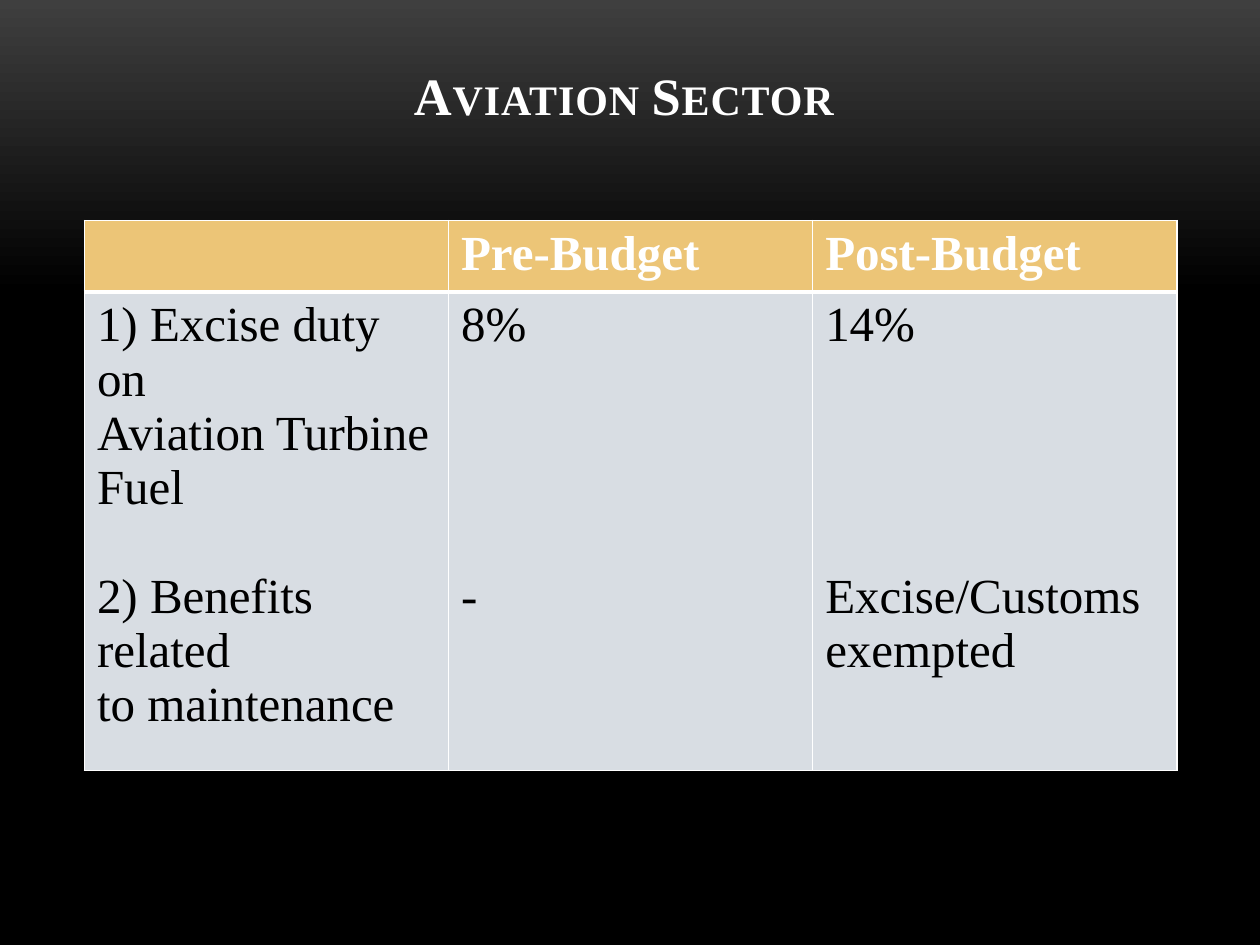
from dataclasses import dataclass

from lxml.etree import SubElement
from pptx import Presentation
from pptx.dml.color import RGBColor
from pptx.enum.text import MSO_ANCHOR, PP_ALIGN
from pptx.oxml.ns import qn
from pptx.util import Inches, Pt


@dataclass(frozen=True)
class Theme:
    font: str = "Times New Roman"
    title_size: int = 30
    table_size: int = 28
    line_height: int = 31
    white: str = "FFFFFF"
    black: str = "000000"
    glow: str = "3F3F3F"
    header: str = "ECC577"
    body: str = "D8DDE3"


THEME = Theme()
LEFT, WIDTH = 0.67, 8.67
ROW_HEIGHTS = (0.53, 3.54)

# Each cell holds (text, number of lines left free above it)
ROWS = [
    [[], [("Pre-Budget", 0)], [("Post-Budget", 0)]],
    [
        [("1) Excise duty on", 0), ("Aviation Turbine Fuel", 0),
         ("2) Benefits related", 1), ("to maintenance", 0)],
        [("8%", 0), ("-", 4)],
        [("14%", 0), ("Excise/Customs exempted", 4)],
    ],
]


def write(paragraph, text, *, size, color, bold=False, align=PP_ALIGN.LEFT,
          space_before=0, small_caps=False, spacing=0):
    paragraph.alignment = align
    if space_before:
        paragraph.space_before = Pt(space_before)
    run = paragraph.add_run()
    run.text = text
    font = run.font
    font.name, font.size, font.bold = THEME.font, Pt(size), bold
    font.color.rgb = RGBColor.from_string(color)
    properties = run._r.get_or_add_rPr()
    if small_caps:
        properties.set("cap", "small")
    if spacing:
        properties.set("spc", str(int(spacing * 100)))


def paint_background(slide):
    fill = slide.background.fill
    fill.gradient()
    fill.gradient_angle = 270
    stops = ((0, THEME.glow), (0.31, THEME.black))
    for stop, (position, color) in zip(fill.gradient_stops, stops):
        stop.position = position
        stop.color.rgb = RGBColor.from_string(color)


def add_title(slide, text):
    shape = slide.shapes.add_textbox(
        Inches(LEFT), Inches(0.3), Inches(WIDTH), Inches(1.25))
    frame = shape.text_frame
    frame.word_wrap = True
    frame.vertical_anchor = MSO_ANCHOR.BOTTOM
    frame.margin_bottom = Inches(0.55)
    write(frame.paragraphs[0], text, size=THEME.title_size, color=THEME.white,
          bold=True, align=PP_ALIGN.CENTER, small_caps=True, spacing=0.5)


def set_borders(cell, **widths):
    properties = cell._tc.get_or_add_tcPr()
    for side in "LRTB":
        line = SubElement(properties, qn(f"a:ln{side}"),
                          w=str(Pt(widths.get(side, 1))))
        fill = SubElement(line, qn("a:solidFill"))
        SubElement(fill, qn("a:srgbClr"), val=THEME.white)


def fill_cell(cell, lines, is_header):
    set_borders(cell, **({"B": 3} if is_header else {"T": 3}))
    cell.fill.solid()
    cell.fill.fore_color.rgb = RGBColor.from_string(
        THEME.header if is_header else THEME.body)
    frame = cell.text_frame
    for index, (text, free_lines) in enumerate(lines):
        paragraph = frame.add_paragraph() if index else frame.paragraphs[0]
        write(paragraph, text, size=THEME.table_size, bold=is_header,
              color=THEME.white if is_header else THEME.black,
              space_before=free_lines * THEME.line_height)


def add_budget_table(slide):
    table = slide.shapes.add_table(
        len(ROWS), len(ROWS[0]), Inches(LEFT), Inches(1.75),
        Inches(WIDTH), Inches(sum(ROW_HEIGHTS))).table
    table.horz_banding = False
    for row_index, (row, height) in enumerate(zip(ROWS, ROW_HEIGHTS)):
        table.rows[row_index].height = Inches(height)
        for column_index, lines in enumerate(row):
            fill_cell(table.cell(row_index, column_index), lines, row_index == 0)


def main():
    presentation = Presentation()
    presentation.slide_width, presentation.slide_height = Inches(10), Inches(7.5)
    slide = presentation.slides.add_slide(presentation.slide_layouts[6])
    paint_background(slide)
    add_title(slide, "Aviation Sector")
    add_budget_table(slide)
    presentation.save("out.pptx")


if __name__ == "__main__":
    main()
